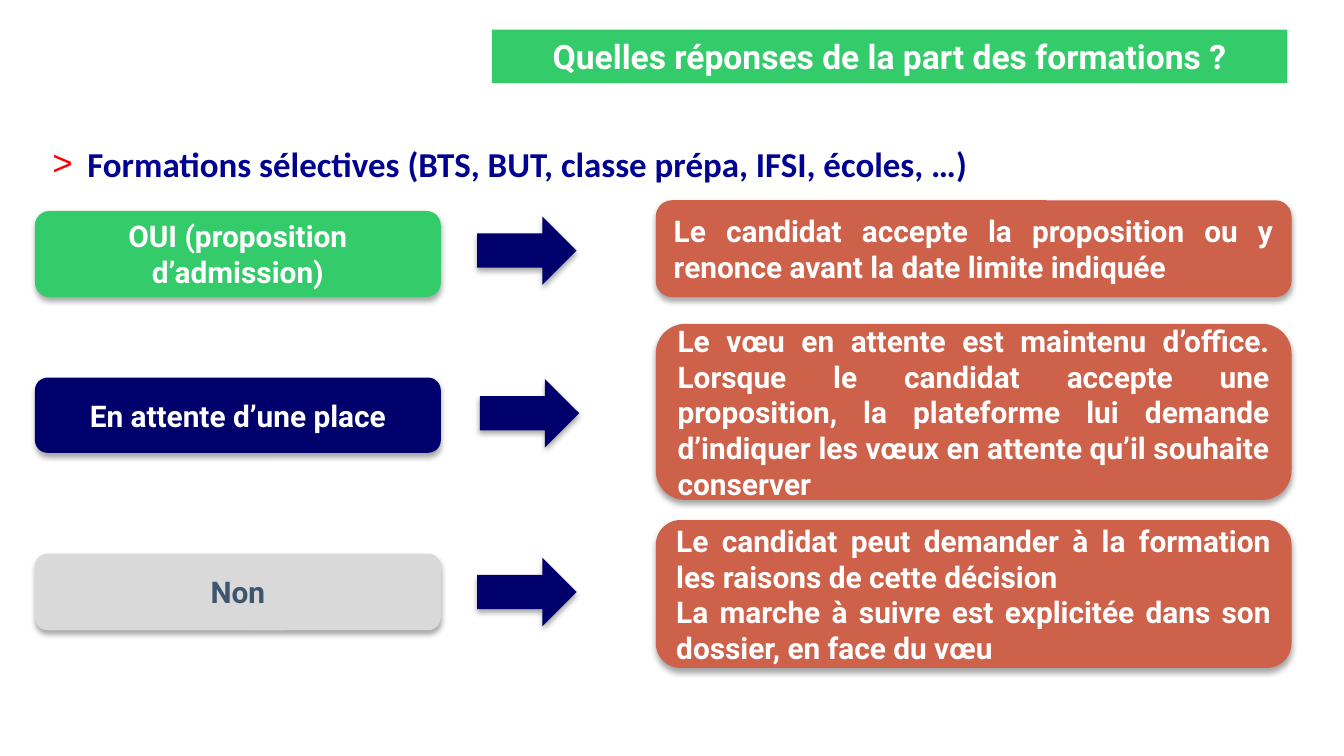
from lxml.etree import SubElement
from pptx import Presentation
from pptx.dml.color import RGBColor
from pptx.enum.shapes import MSO_SHAPE as Shape
from pptx.enum.text import MSO_ANCHOR as Anchor, PP_ALIGN as Align
from pptx.oxml.ns import qn
from pptx.util import Inches, Pt

COLORS = {
    "green": "34CB6A",
    "navy": "00006D",
    "brick": "CE614A",
    "gray": "D9D9D9",
    "slate": "3D566E",
    "white": "FFFFFF",
    "blue": "000091",
    "red": "FF0000",
}

ANSWER_LEFT, ANSWER_WIDTH = 0.26, 3.02
OUTCOME_LEFT, OUTCOME_WIDTH = 4.88, 4.73
ARROW_WIDTH, ARROW_HEIGHT = 0.74, 0.51

ROWS = [
    {
        "answer": ("OUI (proposition d’admission)", "green", "white", 1.57, 0.64),
        "arrow": (3.55, 1.61),
        "outcome": (
            "Le candidat accepte la proposition ou y renonce avant la date limite indiquée",
            1.49, 0.72,
        ),
    },
    {
        "answer": ("En attente d’une place", "navy", "white", 2.81, 0.56),
        "arrow": (3.57, 2.82),
        "outcome": (
            "Le vœu en attente est maintenu d’office. Lorsque le candidat accepte une "
            "proposition, la plateforme lui demande d’indiquer les vœux en attente "
            "qu’il souhaite conserver",
            2.41, 1.31,
        ),
    },
    {
        "answer": ("Non", "gray", "slate", 4.12, 0.57),
        "arrow": (3.55, 4.15),
        "outcome": (
            "Le candidat peut demander à la formation les raisons de cette décision\n"
            "La marche à suivre est explicitée dans son dossier, en face du vœu",
            3.87, 1.1,
        ),
    },
]


def rgb(name):
    """Return the named colour."""
    return RGBColor.from_string(COLORS[name])


def style_text(shape, text, size, font_name, color, align):
    """Write bold text in the middle of a shape."""
    frame = shape.text_frame
    frame.word_wrap = True
    frame.vertical_anchor = Anchor.MIDDLE
    frame.text = text
    for paragraph in frame.paragraphs:
        paragraph.alignment = align
        for run in paragraph.runs:
            run.font.size = Pt(size)
            run.font.name = font_name
            run.font.bold = True
            run.font.color.rgb = rgb(color)


def add_filled_shape(slide, kind, box, fill, shadow=True):
    """Add a shape without outline, with an optional soft shadow below."""
    shape = slide.shapes.add_shape(kind, *map(Inches, box))
    shape.fill.solid()
    shape.fill.fore_color.rgb = rgb(fill)
    shape.line.fill.background()
    shape.shadow.inherit = False
    if shadow:
        effects = shape._element.spPr.find(qn("a:effectLst"))
        outer = SubElement(effects, qn("a:outerShdw"), blurRad="40000",
                           dist="23000", dir="5400000", rotWithShape="0")
        tint = SubElement(outer, qn("a:srgbClr"), val="000000")
        SubElement(tint, qn("a:alpha"), val="35000")
    return shape


def add_title(slide, box):
    """Add the title banner."""
    banner = add_filled_shape(slide, Shape.RECTANGLE, box, "green", shadow=False)
    style_text(banner, "Quelles réponses de la part des formations ?",
               18, "Roboto", "white", Align.CENTER)


def add_heading(slide, box):
    """Add the heading with its red bullet."""
    heading = slide.shapes.add_textbox(*map(Inches, box))
    frame = heading.text_frame
    frame.margin_left = frame.margin_right = Inches(0.13)
    style_text(heading, "Formations sélectives (BTS, BUT, classe prépa, IFSI, écoles, …)",
               18.7, "Calibri", "blue", Align.LEFT)
    properties = frame.paragraphs[0]._p.get_or_add_pPr()
    properties.set("marL", str(Inches(0.26)))
    properties.set("indent", str(Inches(-0.26)))
    bullet_color = SubElement(properties, qn("a:buClr"))
    SubElement(bullet_color, qn("a:srgbClr"), val=COLORS["red"])
    SubElement(properties, qn("a:buFont"), typeface="Arial")
    SubElement(properties, qn("a:buChar"), char=">")


def add_row(slide, row):
    """Add one answer, its arrow and what follows for the candidate."""
    text, fill, color, top, height = row["answer"]
    answer = add_filled_shape(slide, Shape.ROUNDED_RECTANGLE,
                              (ANSWER_LEFT, top, ANSWER_WIDTH, height), fill)
    style_text(answer, text, 16, "Roboto", color, Align.CENTER)
    add_filled_shape(slide, Shape.RIGHT_ARROW,
                     (*row["arrow"], ARROW_WIDTH, ARROW_HEIGHT), "navy")
    text, top, height = row["outcome"]
    outcome = add_filled_shape(slide, Shape.ROUNDED_RECTANGLE,
                               (OUTCOME_LEFT, top, OUTCOME_WIDTH, height), "brick")
    style_text(outcome, text, 16, "Roboto", "white", Align.JUSTIFY)


def main():
    """Build and save the slide."""
    presentation = Presentation()
    presentation.slide_width = Inches(10)
    presentation.slide_height = Inches(10) * 9 // 16
    slide = presentation.slides.add_slide(presentation.slide_layouts[6])
    add_heading(slide, (0.26, 0.99, 8.11, 0.46))
    for row in ROWS:
        add_row(slide, row)
    add_title(slide, (3.66, 0.22, 5.92, 0.4))
    presentation.save("out.pptx")


if __name__ == "__main__":
    main()
